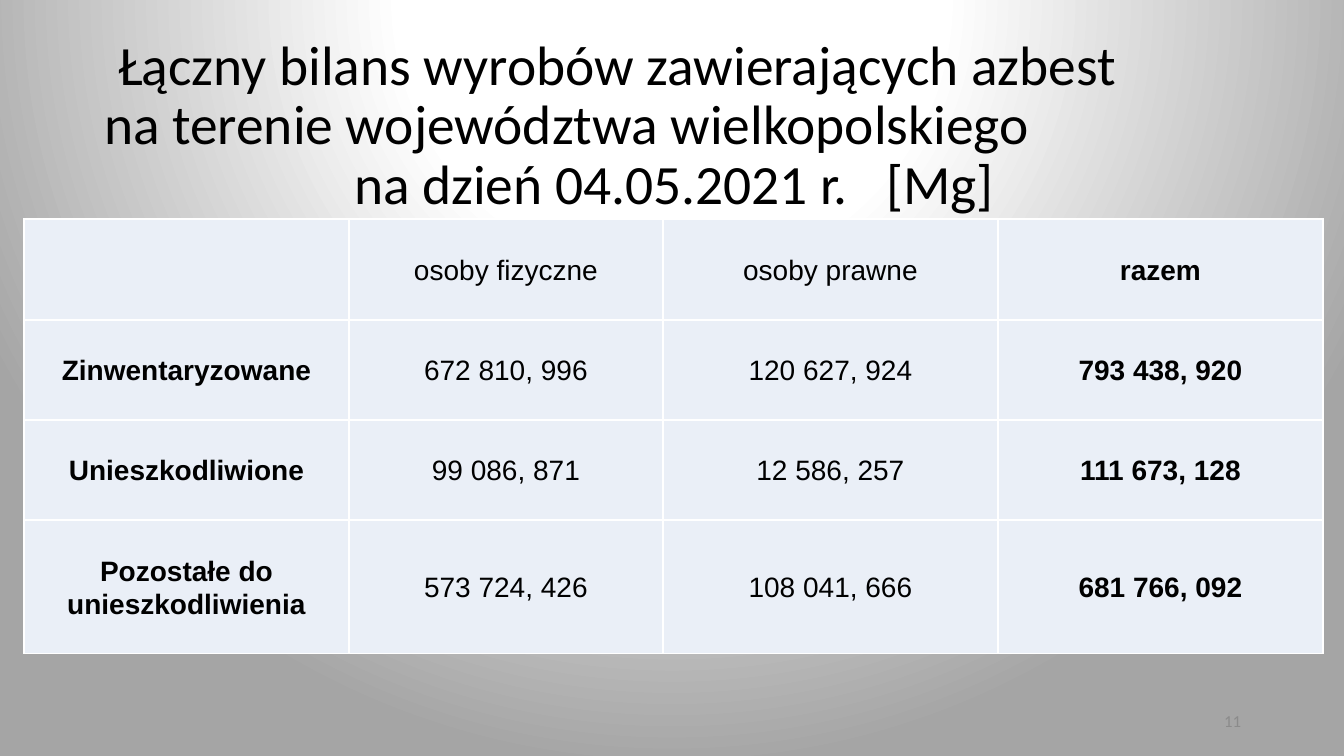
from lxml import etree
from pptx import Presentation
from pptx.dml.color import RGBColor
from pptx.enum.text import MSO_ANCHOR, MSO_AUTO_SIZE, PP_ALIGN
from pptx.oxml import parse_xml
from pptx.oxml.ns import qn
from pptx.util import Emu, Pt

LEFT, CENTER, RIGHT = PP_ALIGN.LEFT, PP_ALIGN.CENTER, PP_ALIGN.RIGHT
MIDDLE = MSO_ANCHOR.MIDDLE
NO_FIT = MSO_AUTO_SIZE.NONE
A_NS = "http://schemas.openxmlformats.org/drawingml/2006/main"
COLORS = {"text": "000000", "cell": "EAEFF7", "border": "FFFFFF",
          "center": "FFFFFF", "edge": "A5A5A5", "number": "8B8B8B"}


def px(n):
    return Emu(round(n * 914400 / 100.8))


def style(p, font, size, color, align, bold=False):
    p.alignment = align
    p.font.name = font
    p.font.size = Pt(size)
    p.font.bold = bold
    p.font.color.rgb = RGBColor.from_string(COLORS[color])


prs = Presentation()
prs.slide_width, prs.slide_height = px(1344), px(756)
s = prs.slides.add_slide(prs.slide_layouts[5])

# Background: circular gradient centred above the slide
fill = s.background.fill
fill.gradient()
bg = s.background._cSld.find(".//" + qn("a:gradFill"))
stops = "".join(
    f'<a:gs pos="{pos}"><a:srgbClr val="{COLORS[name]}"/></a:gs>'
    for pos, name in ((0, "center"), (35000, "center"), (100000, "edge")))
bg.getparent().replace(bg, parse_xml(
    f'<a:gradFill xmlns:a="{A_NS}" rotWithShape="1"><a:gsLst>{stops}</a:gsLst>'
    '<a:path path="circle"><a:fillToRect l="50000" t="-80000" r="50000" b="180000"/>'
    '</a:path></a:gradFill>'))

# Title: each line has its own indent
title = s.shapes.title
title.left, title.top, title.width, title.height = px(79), px(40), px(1188), px(174)
tf = title.text_frame
tf.auto_size = NO_FIT
tf.word_wrap = True
tf.vertical_anchor = MIDDLE
TITLE_LINES = [
    (29, ["Łączny bilans wyrobów zawierających azbest"]),
    (15, ["na terenie województwa wielkopolskiego"]),
    (265, ["na dzień 04.05.2021 r.", " ", "[Mg]"]),
]
for i, (indent, parts) in enumerate(TITLE_LINES):
    p = tf.paragraphs[0] if i == 0 else tf.add_paragraph()
    for part in parts:
        r = p.add_run()
        r.text = part
        if part == " ":
            r.font._element.set("spc", "1800")  # widened gap before the unit
    pPr = p._p.get_or_add_pPr()
    pPr.set("marL", str(px(indent)))
    pPr.set("indent", "0")
    p.line_spacing = 0.9
    p.space_before = Pt(0)
    style(p, "Calibri", 39.6, "text", LEFT)

# Balance table
ROWS = [
    ["", "osoby fizyczne", "osoby prawne", "razem"],
    ["Zinwentaryzowane", "672 810, 996", "120 627, 924", "793 438, 920"],
    ["Unieszkodliwione", "99 086, 871", "12 586, 257", "111 673, 128"],
    ["Pozostałe do unieszkodliwienia", "573 724, 426", "108 041, 666", "681 766, 092"],
]
COL_WIDTHS = [325, 314, 335, 325]
ROW_HEIGHTS = [101, 100, 100, 134]
table = s.shapes.add_table(len(ROWS), len(COL_WIDTHS), px(24), px(219),
                           px(sum(COL_WIDTHS)), px(sum(ROW_HEIGHTS))).table
for column, width in zip(table.columns, COL_WIDTHS):
    column.width = px(width)
for row, height, texts in zip(table.rows, ROW_HEIGHTS, ROWS):
    row.height = px(height)
    for col, (cell, text) in enumerate(zip(row.cells, texts)):
        cell.text = text
        cell.vertical_anchor = MIDDLE
        cell.margin_left = cell.margin_right = px(7)
        cell.margin_top = cell.margin_bottom = 0
        tcPr = cell._tc.get_or_add_tcPr()
        for side in ("lnL", "lnR", "lnT", "lnB"):
            ln = etree.SubElement(tcPr, qn(f"a:{side}"), w=str(Pt(1)))
            solid = etree.SubElement(ln, qn("a:solidFill"))
            etree.SubElement(solid, qn("a:srgbClr"), val=COLORS["border"])
        cell.fill.solid()
        cell.fill.fore_color.rgb = RGBColor.from_string(COLORS["cell"])
        p = cell.text_frame.paragraphs[0]
        p.line_spacing = 1.07
        style(p, "Arial", 20, "text", CENTER, bold=col in (0, 3))

# Slide number
number = s.shapes.add_textbox(px(949), px(701), px(302), px(40))
tf = number.text_frame
tf.word_wrap = True
tf.vertical_anchor = MIDDLE
p = tf.paragraphs[0]
p.text = "11"
style(p, "Calibri", 12, "number", RIGHT)

prs.save("out.pptx")
